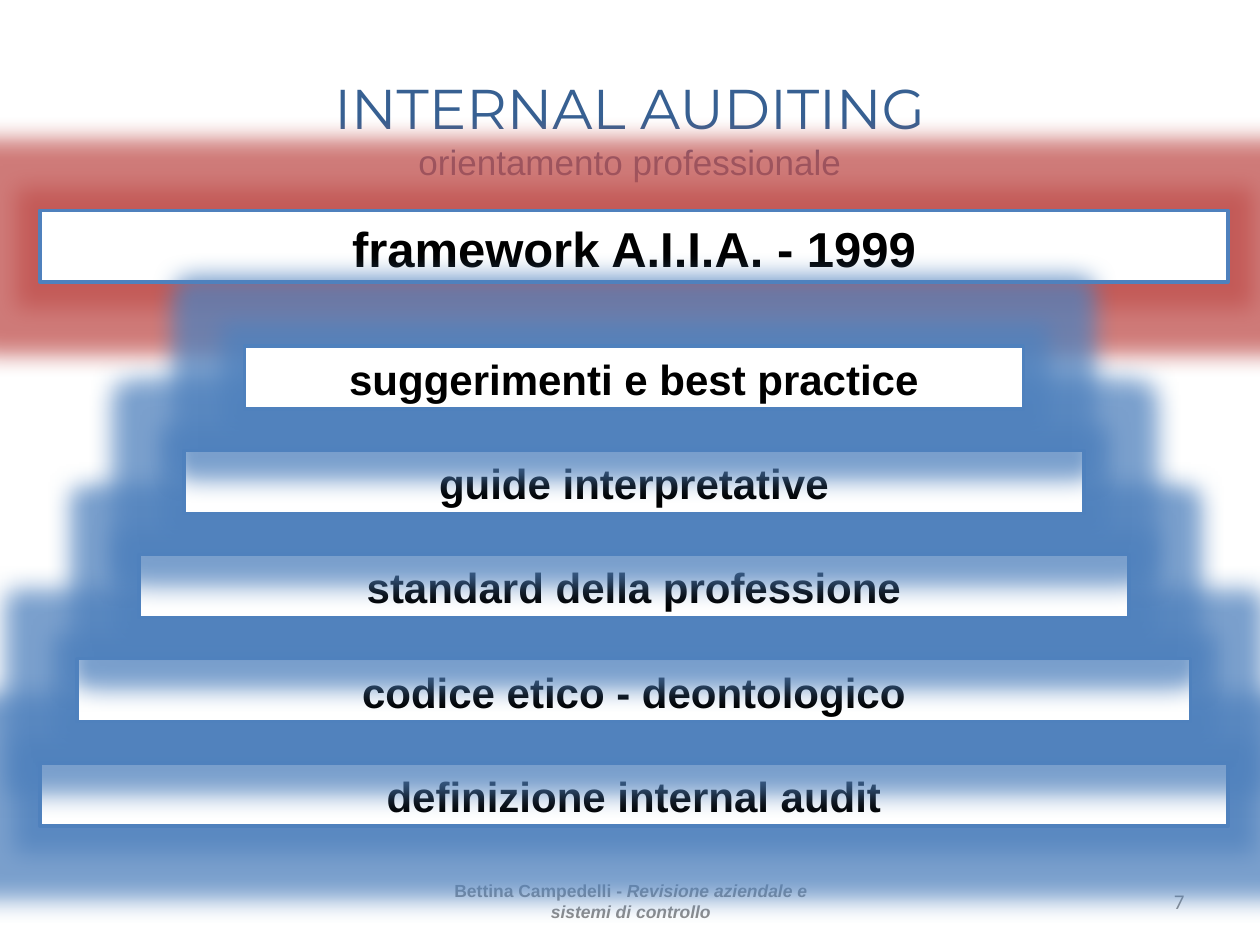
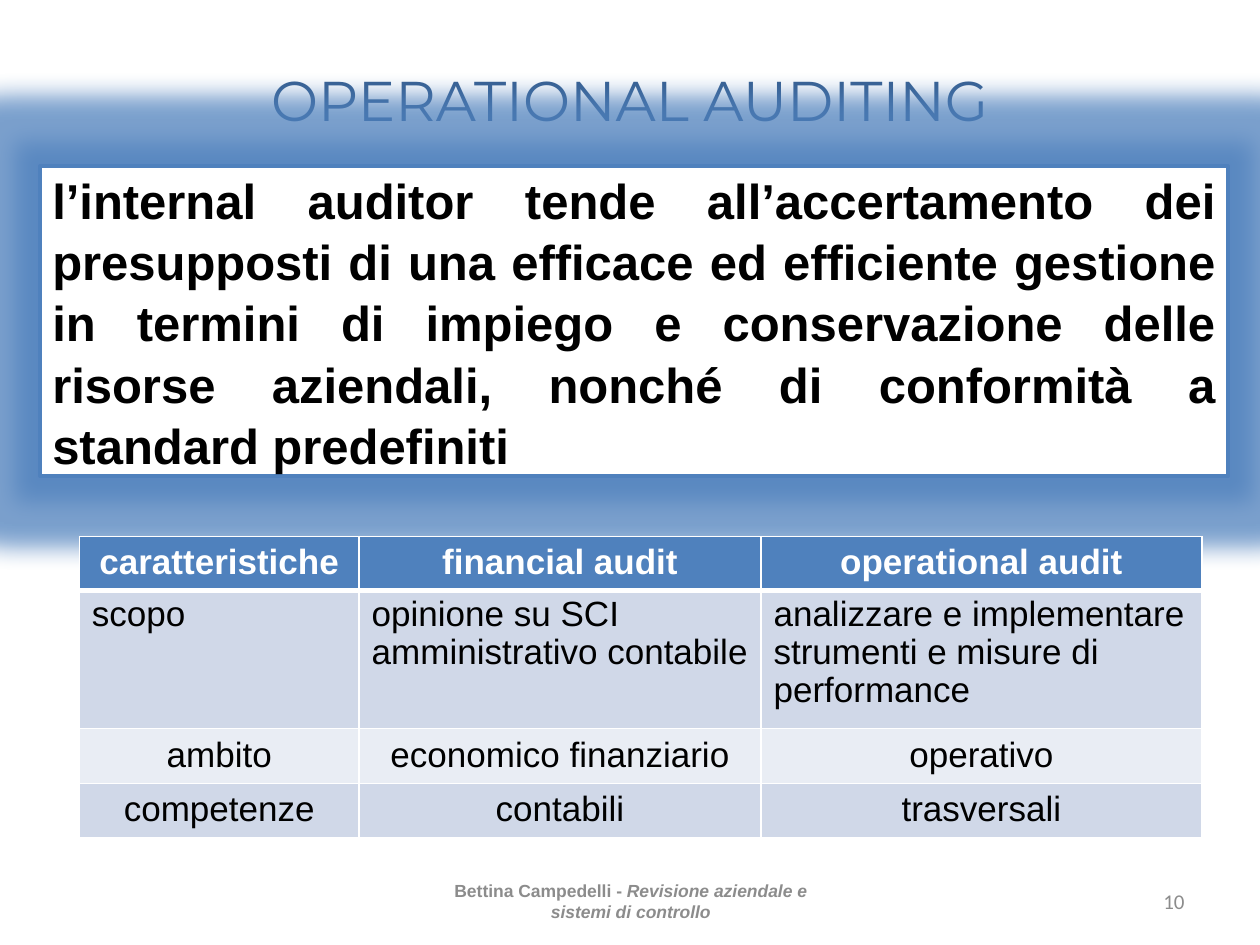
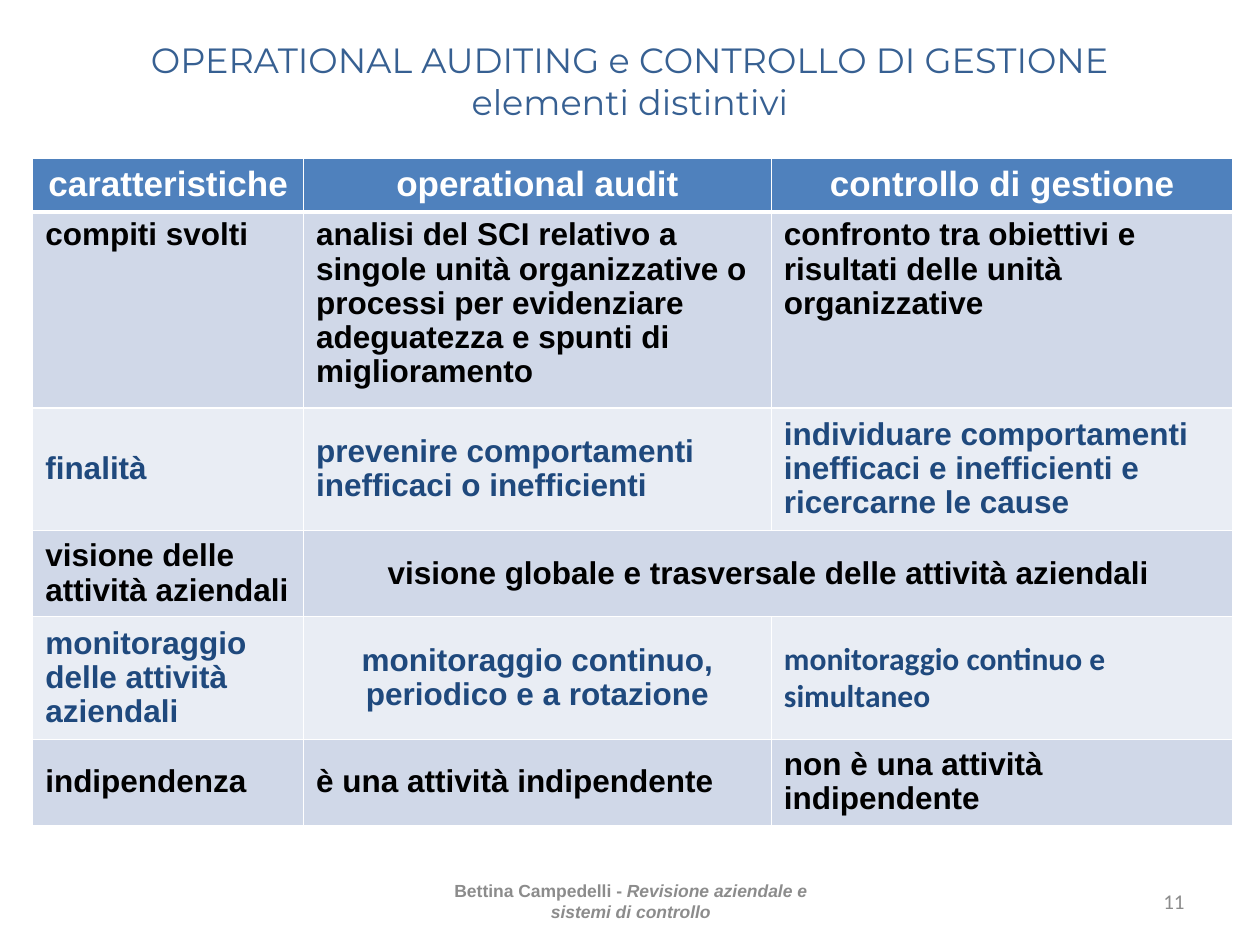
"""Build three slides on internal and operational auditing."""
import dataclasses

import lxml.etree
import pptx
import pptx.dml.color
import pptx.enum.shapes
import pptx.enum.text
import pptx.oxml
import pptx.oxml.ns
import pptx.util

Cm, Pt = pptx.util.Cm, pptx.util.Pt
RGB = pptx.dml.color.RGBColor.from_string
Align, Anchor = pptx.enum.text.PP_ALIGN, pptx.enum.text.MSO_ANCHOR
qn = pptx.oxml.ns.qn


@dataclasses.dataclass(frozen=True)
class Theme:
    """Colours, fonts and type sizes of the deck."""
    head: str = "376092"
    blue: str = "4F81BD"
    red: str = "C0504D"
    navy: str = "1F497D"
    gray: str = "8C8C8C"
    dark: str = "D0D8E8"
    pale: str = "E9EDF4"
    white: str = "FFFFFF"
    black: str = "000000"
    sans: str = "Arial"
    title: str = "Montserrat"
    num: str = "Calibri"
    huge: int = 32
    big: int = 28
    step: int = 24
    mid: int = 20
    body: int = 18
    page: int = 12
    foot: int = 10


theme = Theme()


def style(item, size, color, face=theme.sans, bold=False):
    """Set the font of a paragraph or run."""
    font = item.font
    font.size, font.name, font.bold = Pt(size), face, bold
    font.color.rgb = RGB(color)


def add_text(slide, left, top, width, height, align):
    """Add a wrapped, middle-anchored text box and return its paragraph."""
    frame = slide.shapes.add_textbox(Cm(left), Cm(top), Cm(width), Cm(height)).text_frame
    frame.word_wrap = True
    frame.vertical_anchor = Anchor.MIDDLE
    para = frame.paragraphs[0]
    para.alignment = align
    return para


deck = pptx.Presentation()
deck.slide_width, deck.slide_height = Cm(25.4), Cm(19.05)

heads = [
    (1.04, "7", [("INTERNAL AUDITING", theme.huge, theme.title),
                 ("orientamento professionale", theme.mid, theme.sans)]),
    (0.46, "10", [("OPERATIONAL AUDITING", theme.huge, theme.title)]),
    (0.08, "11", [("OPERATIONAL AUDITING e CONTROLLO DI GESTIONE", theme.mid, theme.title),
                  ("elementi distintivi", theme.mid, theme.title)]),
]
slides = []
for top, page, lines in heads:
    slide = deck.slides.add_slide(deck.slide_layouts[6])
    slides.append(slide)
    para = add_text(slide, 0, top, 25.4, 3.07, Align.CENTER)
    for n, (text, size, face) in enumerate(lines):
        if n:
            para.add_line_break()
        run = para.add_run()
        run.text = text
        style(run, size, theme.head, face)

    para = add_text(slide, 8.69, 17.65, 8.05, 1.02, Align.CENTER)
    style(para, theme.foot, theme.gray, bold=True)
    para.add_run().text = "Bettina Campedelli - "
    run = para.add_run()
    run.text = "Revisione aziendale e sistemi di controllo"
    run.font.italic = True

    para = add_text(slide, 18.21, 17.65, 5.92, 1.02, Align.RIGHT)
    para.text = page
    style(para, theme.page, theme.gray, theme.num)

first, second, third = slides
axis, wide = 12.78, 23.95
boxes = [
    (first, 4.24, wide, 1.45, "framework A.I.I.A. - 1999", theme.big, theme.red, Align.CENTER),
    (second, 3.35, wide, 6.25,
     "l’internal auditor tende all’accertamento dei presupposti di una efficace ed "
     "efficiente gestione in termini di impiego e conservazione delle risorse aziendali, "
     "nonché di conformità a standard predefiniti", theme.big, theme.blue, Align.JUSTIFY),
]
steps = [
    ("definizione internal audit", wide),
    ("codice etico - deontologico", 22.45),
    ("standard della professione", 19.96),
    ("guide interpretative", 18.14),
    ("suggerimenti e best practice", 15.7),
]
for n, (text, width) in enumerate(steps):
    boxes.append((first, 15.38 - 2.1 * n, width, 1.27, text, theme.step, theme.blue, Align.CENTER))

for slide, top, width, height, text, size, halo, align in boxes:
    box = slide.shapes.add_shape(pptx.enum.shapes.MSO_SHAPE.RECTANGLE,
                                 Cm(axis - width / 2), Cm(top), Cm(width), Cm(height))
    box.shadow.inherit = False
    box.fill.solid()
    box.fill.fore_color.rgb = RGB(theme.white)
    box.line.color.rgb = RGB(theme.blue)
    box.line.width = Pt(2)
    effects = box._element.spPr.find(qn("a:effectLst"))
    glow = lxml.etree.SubElement(effects, qn("a:glow"), rad=str(Pt(27)))
    color = lxml.etree.SubElement(glow, qn("a:srgbClr"), val=halo)
    lxml.etree.SubElement(color, qn("a:alpha"), val="75000")
    frame = box.text_frame
    frame.word_wrap = True
    frame.vertical_anchor = Anchor.MIDDLE
    para = frame.paragraphs[0]
    para.text, para.alignment, para.line_spacing = text, align, 1.04
    style(para, size, theme.black, bold=True)

audits = [
    ["caratteristiche", "financial audit", "operational audit"],
    ["scopo", "opinione su SCI amministrativo contabile",
     "analizzare e implementare strumenti e misure di performance"],
    ["ambito", "economico finanziario", "operativo"],
    ["competenze", "contabili", "trasversali"],
]
traits = [
    ["caratteristiche", "operational audit", "controllo di gestione"],
    ["compiti svolti",
     "analisi del SCI relativo a singole unità organizzative o processi per evidenziare "
     "adeguatezza e spunti di miglioramento",
     "confronto tra obiettivi e risultati delle unità organizzative"],
    ["finalità", "prevenire comportamenti inefficaci o inefficienti",
     "individuare comportamenti inefficaci e inefficienti e ricercarne le cause"],
    ["visione delle attività aziendali",
     "visione globale e trasversale delle attività aziendali", ""],
    ["monitoraggio delle attività aziendali",
     "monitoraggio continuo, periodico e a rotazione", "monitoraggio continuo e simultaneo"],
    ["indipendenza", "è una attività indipendente", "non è una attività indipendente"],
]
grids = [
    (second, audits, 1.6, 10.82, [5.64, 8.1, 8.89], [1.08, 2.79, 1.1, 1.1],
     theme.mid, False, theme.black, {(r, c) for r in (2, 3) for c in range(3)}),
    (third, traits, 0.66, 3.2, [5.46, 9.43, 9.31], [1.01, 3.82, 2.39, 1.67, 2.39, 1.67],
     theme.body, True, theme.navy, {(3, 1), (4, 1)}),
]
for slide, rows, left, top, widths, heights, size, bold, even, centred in grids:
    grid = slide.shapes.add_table(len(rows), len(widths), Cm(left), Cm(top),
                                  Cm(sum(widths)), Cm(sum(heights))).table
    for col, width in zip(grid.columns, widths):
        col.width = Cm(width)
    for r, (row, height) in enumerate(zip(rows, heights)):
        grid.rows[r].height = Cm(height)
        for c, text in enumerate(row):
            cell = grid.cell(r, c)
            props = cell._tc.get_or_add_tcPr()
            for side in "LRTB":
                thick = (r, side) in ((0, "B"), (1, "T"))
                edge = lxml.etree.SubElement(props, qn("a:ln" + side), w=str(Pt(3 if thick else 1)))
                fill = lxml.etree.SubElement(edge, qn("a:solidFill"))
                lxml.etree.SubElement(fill, qn("a:srgbClr"), val=theme.white)
            cell.fill.solid()
            cell.fill.fore_color.rgb = RGB(
                theme.blue if r == 0 else theme.dark if r % 2 else theme.pale)
            cell.vertical_anchor = Anchor.TOP if r == 1 else Anchor.MIDDLE
            para = cell.text_frame.paragraphs[0]
            para.text, para.line_spacing = text, 0.97
            para.alignment = Align.CENTER if r == 0 or (r, c) in centred else Align.LEFT
            if r == 0:
                style(para, theme.mid, theme.white, bold=True)
            else:
                face = theme.num if text == "monitoraggio continuo e simultaneo" else theme.sans
                style(para, size, theme.black if r % 2 else even, face, bold)
    if rows is traits:
        grid.cell(3, 1).merge(grid.cell(3, 2))

deck.save("out.pptx")
